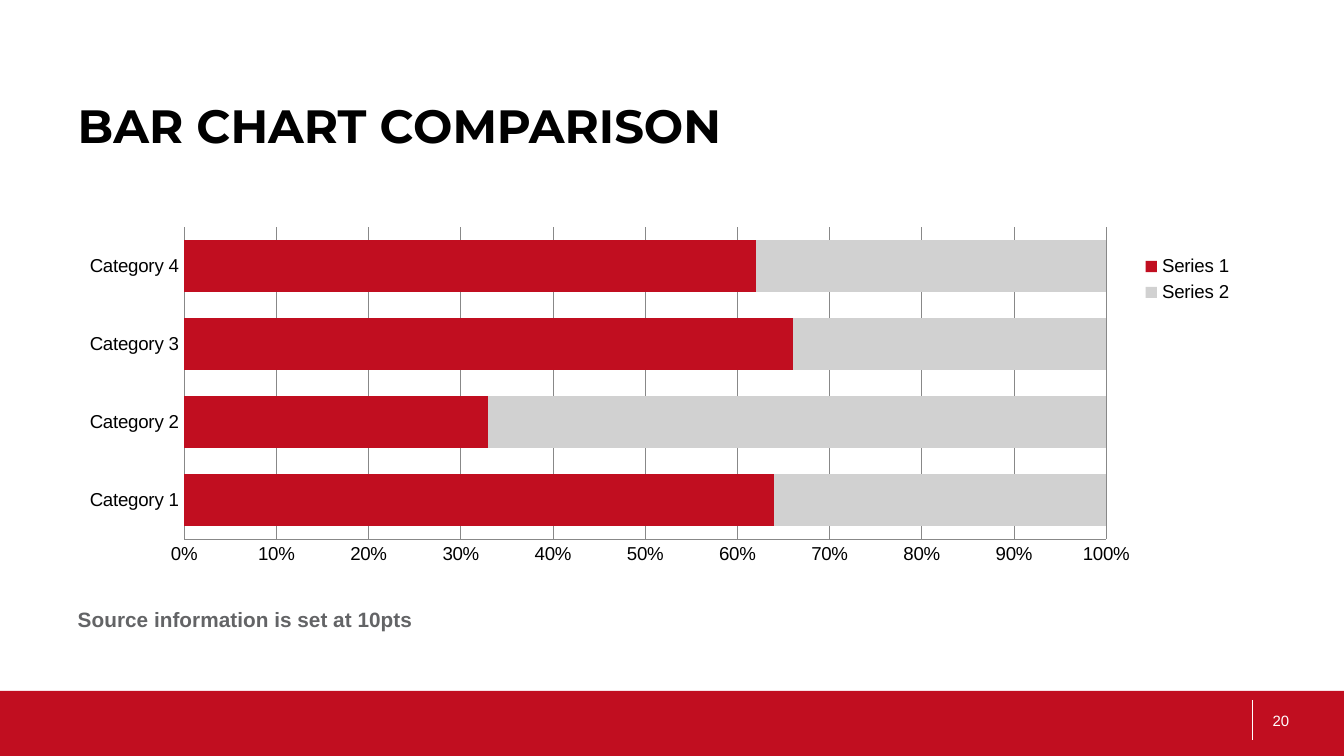
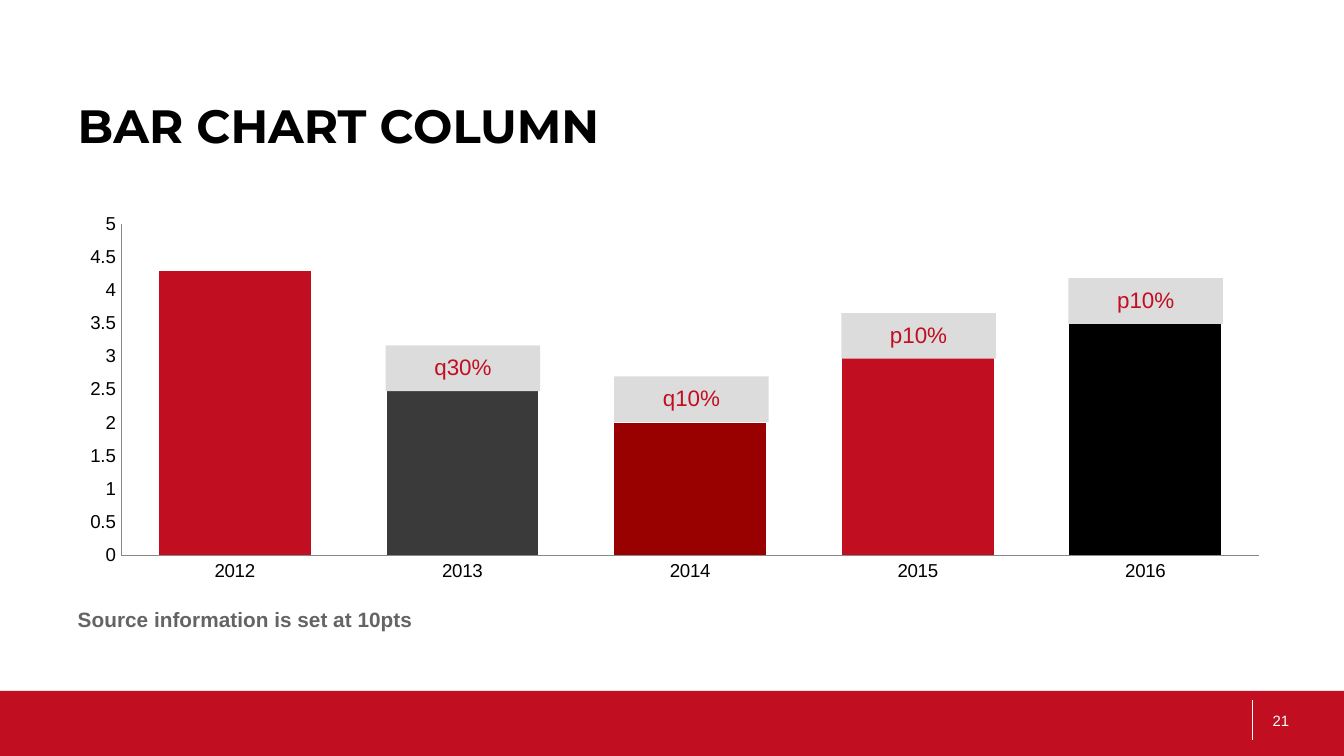
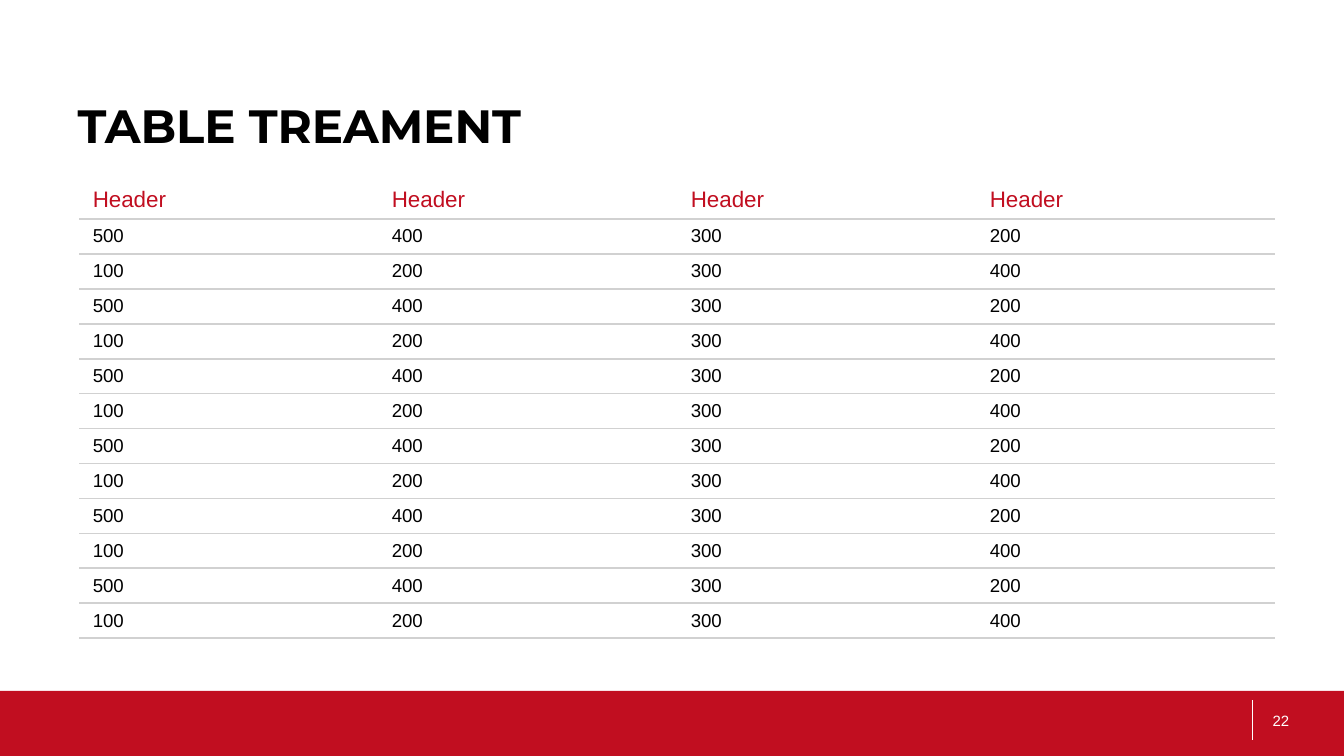
from lxml import etree
from pptx import Presentation
from pptx import util as u
from pptx.chart import data as chart_data
from pptx.dml import color as dml
from pptx.enum import chart as charts, shapes, text
from pptx.oxml import ns

RED, GREY, BLACK, WHITE = "C10E20", "D1D1D1", "000000", "FFFFFF"
AXIS_GREY, SOURCE_GREY, LABEL_GREY = "888888", "636466", "DCDCDC"
FIRST_PAGE = 20
TITLES = ["BAR CHART COMPARISON", "BAR CHART COLUMN", "TABLE TREAMENT"]


def color(hex_value):
    return dml.RGBColor.from_string(hex_value)


def write(frame, words, size, hex_value, font="Arial", bold=False, align=None,
          anchor=text.MSO_ANCHOR.TOP, line_spacing=None, before=None):
    frame.word_wrap = True
    frame.vertical_anchor = anchor
    paragraph = frame.paragraphs[0]
    paragraph.alignment = align
    paragraph.line_spacing = line_spacing
    if before:
        paragraph.space_before = u.Pt(before)
    run = paragraph.add_run()
    run.text = words
    run.font.name = font
    run.font.size = u.Pt(size)
    run.font.bold = bold
    run.font.color.rgb = color(hex_value)


# Widescreen page, 16 to 9
presentation = Presentation()
presentation.slide_width = u.Inches(10)
presentation.slide_height = u.Inches(10) * 9 // 16

# Shared parts: footer band, divider, page number, title
slides = []
for page, title in enumerate(TITLES, FIRST_PAGE):
    slide = presentation.slides.add_slide(presentation.slide_layouts[6])
    slides.append(slide)
    band_top = u.Inches(5.14)
    band = slide.shapes.add_shape(
        shapes.MSO_SHAPE.RECTANGLE, 0, band_top,
        presentation.slide_width, presentation.slide_height - band_top)
    band.shadow.inherit = False
    band.fill.solid()
    band.fill.fore_color.rgb = color(RED)
    band.line.fill.background()

    divider = slide.shapes.add_connector(
        shapes.MSO_CONNECTOR.STRAIGHT,
        u.Inches(9.32), u.Inches(5.21), u.Inches(9.32), u.Inches(5.51))
    divider.line.color.rgb = color(WHITE)
    divider.line.width = u.Pt(0.5)
    etree.SubElement(divider.element.spPr, ns.qn("a:effectLst"))

    box = slide.shapes.add_textbox(
        u.Inches(9.37), u.Inches(5.21), u.Inches(0.63), u.Inches(0.3))
    write(box.text_frame, str(page), 8, WHITE, anchor=text.MSO_ANCHOR.MIDDLE)
    box = slide.shapes.add_textbox(
        u.Inches(0.48), u.Inches(0.67), u.Inches(7.52), u.Inches(1.07))
    write(box.text_frame, title, 25, BLACK, font="Montserrat", bold=True)

comparison_slide, column_slide, table_slide = slides

# Charts: settings that differ (plot and legend boxes in inches), then one build
chart_settings = [
    dict(slide=comparison_slide, kind=charts.XL_CHART_TYPE.BAR_STACKED_100,
         at=(0.48, 1.55, 8.89, 2.83), plot=(0.89, 0.14, 6.86, 2.32), overlap=100,
         categories=[f"Category {number}" for number in range(1, 5)],
         series=[("Series 1", [64, 33, 66, 62], RED), ("Series 2", [36, 67, 34, 38], GREY)],
         points={}, maximum=1, step=0.1, number_format="0%", legend=(7.91, 0.32, 0.89, 0.42)),
    dict(slide=column_slide, kind=charts.XL_CHART_TYPE.COLUMN_CLUSTERED,
         at=(0.48, 1.5, 9.52, 3), plot=(0.42, 0.17, 8.47, 2.46), overlap=-10,
         categories=[str(year) for year in range(2012, 2017)],
         series=[("Series 1", [4.3, 2.5, 2, 3, 3.5], RED)],
         points={1: "3A3A3A", 2: "990000", 4: BLACK},
         maximum=5, step=0.5, number_format="General", legend=None),
]
for setting in chart_settings:
    data = chart_data.CategoryChartData()
    data.categories = setting["categories"]
    for name, values, _ in setting["series"]:
        data.add_series(name, values)
    place = [u.Inches(length) for length in setting["at"]]
    chart = setting["slide"].shapes.add_chart(setting["kind"], *place, data).chart
    chart.has_title = False
    chart.font.name = "Arial"
    chart.font.size = u.Pt(12)
    chart.font.color.rgb = color(BLACK)

    plot = chart.plots[0]
    plot.gap_width = 50
    plot.overlap = setting["overlap"]
    plot.vary_by_categories = False
    for series, (_, _, fill) in zip(plot.series, setting["series"]):
        series.format.fill.solid()
        series.format.fill.fore_color.rgb = color(fill)
    for index, fill in setting["points"].items():
        point_fill = plot.series[0].points[index].format.fill
        point_fill.solid()
        point_fill.fore_color.rgb = color(fill)

    value_axis = chart.value_axis
    value_axis.minimum_scale = 0
    value_axis.maximum_scale = setting["maximum"]
    value_axis.major_unit = setting["step"]
    value_axis.tick_labels.number_format = setting["number_format"]
    value_axis.tick_labels.number_format_is_linked = False
    value_axis.has_major_gridlines = setting["legend"] is not None
    lines = [chart.category_axis.format.line, value_axis.format.line]
    if value_axis.has_major_gridlines:
        lines.append(value_axis.major_gridlines.format.line)
    for line in lines:
        line.color.rgb = color(AXIS_GREY)
        line.width = u.Pt(0.25)
    small_fonts = []
    for axis in (chart.category_axis, value_axis):
        axis.major_tick_mark = charts.XL_TICK_MARK.NONE
        axis.minor_tick_mark = charts.XL_TICK_MARK.NONE
        small_fonts.append(axis.tick_labels.font)

    # Manual places for the plot area and the legend
    chart.has_legend = setting["legend"] is not None
    chart_xml = chart.element.find(ns.qn("c:chart"))
    manual_places = [("c:plotArea", 0, setting["plot"])]
    if chart.has_legend:
        chart.legend.position = charts.XL_LEGEND_POSITION.RIGHT
        chart.legend.include_in_layout = False
        small_fonts.append(chart.legend.font)
        manual_places.append(("c:legend", 1, setting["legend"]))
    for font in small_fonts:
        font.name = "Arial"
        font.size = u.Pt(10)
    _, _, chart_width, chart_height = setting["at"]
    for tag, position, (left, top, width, height) in manual_places:
        parent = chart_xml.find(ns.qn(tag))
        for old_layout in parent.findall(ns.qn("c:layout")):
            parent.remove(old_layout)
        layout = etree.Element(ns.qn("c:layout"))
        parent.insert(position, layout)
        manual = etree.SubElement(layout, ns.qn("c:manualLayout"))
        entries = [("xMode", "edge"), ("yMode", "edge"),
                   ("x", left / chart_width), ("y", top / chart_height),
                   ("w", width / chart_width), ("h", height / chart_height)]
        if tag == "c:plotArea":
            entries.insert(0, ("layoutTarget", "inner"))
        for entry, value in entries:
            etree.SubElement(manual, ns.qn(f"c:{entry}"), val=str(value))

    # Source line
    box = setting["slide"].shapes.add_textbox(
        u.Inches(0.48), u.Inches(4.45), u.Inches(6.02), u.Inches(0.3))
    write(box.text_frame, "Source information is set at 10pts", 11.1, SOURCE_GREY,
          bold=True, line_spacing=1.1, before=7.5)

# Change labels above the columns
change_labels = [("q30%", 2.87, 2.57), ("q10%", 4.57, 2.8),
                 ("p10%", 6.26, 2.33), ("p10%", 7.95, 2.07)]
for words, left, top in change_labels:
    label = column_slide.shapes.add_shape(
        shapes.MSO_SHAPE.RECTANGLE, u.Inches(left), u.Inches(top),
        u.Inches(1.15), u.Inches(0.34))
    label.shadow.inherit = False
    label.fill.solid()
    label.fill.fore_color.rgb = color(LABEL_GREY)
    label.line.fill.background()
    frame = label.text_frame
    frame.margin_left = frame.margin_right = u.Inches(0.13)
    frame.margin_top = frame.margin_bottom = u.Inches(0.07)
    write(frame, words, 12, RED, align=text.PP_ALIGN.CENTER,
          anchor=text.MSO_ANCHOR.MIDDLE, line_spacing=0.9)

# Table: header, twelve alternating rows, one empty row
rows = [["Header"] * 4]
rows += [["500", "400", "300", "200"], ["100", "200", "300", "400"]] * 6
rows += [[""] * 4]
table = table_slide.shapes.add_table(
    len(rows), 4, u.Inches(0.59), u.Inches(1.34), u.Inches(8.9), u.Inches(3.67)).table
table.horz_banding = False
for column in table.columns:
    column.width = u.Inches(8.9) // 4
for row_index, values in enumerate(rows):
    is_header = row_index == 0
    is_last = row_index == len(rows) - 1
    table.rows[row_index].height = u.Inches(0.29 if is_header else 0.26)
    for column_index, value in enumerate(values):
        cell = table.cell(row_index, column_index)
        cell.margin_top = cell.margin_bottom = u.Inches(0.04)
        cell.vertical_anchor = text.MSO_ANCHOR.MIDDLE
        if value:
            write(cell.text_frame, value, 12 if is_header else 10,
                  RED if is_header else BLACK, anchor=None)
        else:
            cell.text_frame.paragraphs[0].font.size = u.Pt(10)
        properties = cell._tc.get_or_add_tcPr()
        for side in ("lnL", "lnR", "lnT", "lnB"):
            ruled = side == "lnB" and not is_last or side == "lnT" and not is_header
            border = etree.SubElement(properties, ns.qn(f"a:{side}"), w="12700")
            fill = etree.SubElement(border, ns.qn("a:solidFill" if ruled else "a:noFill"))
            if ruled:
                etree.SubElement(fill, ns.qn("a:srgbClr"), val=GREY)
        cell.fill.background()

presentation.save("out.pptx")
